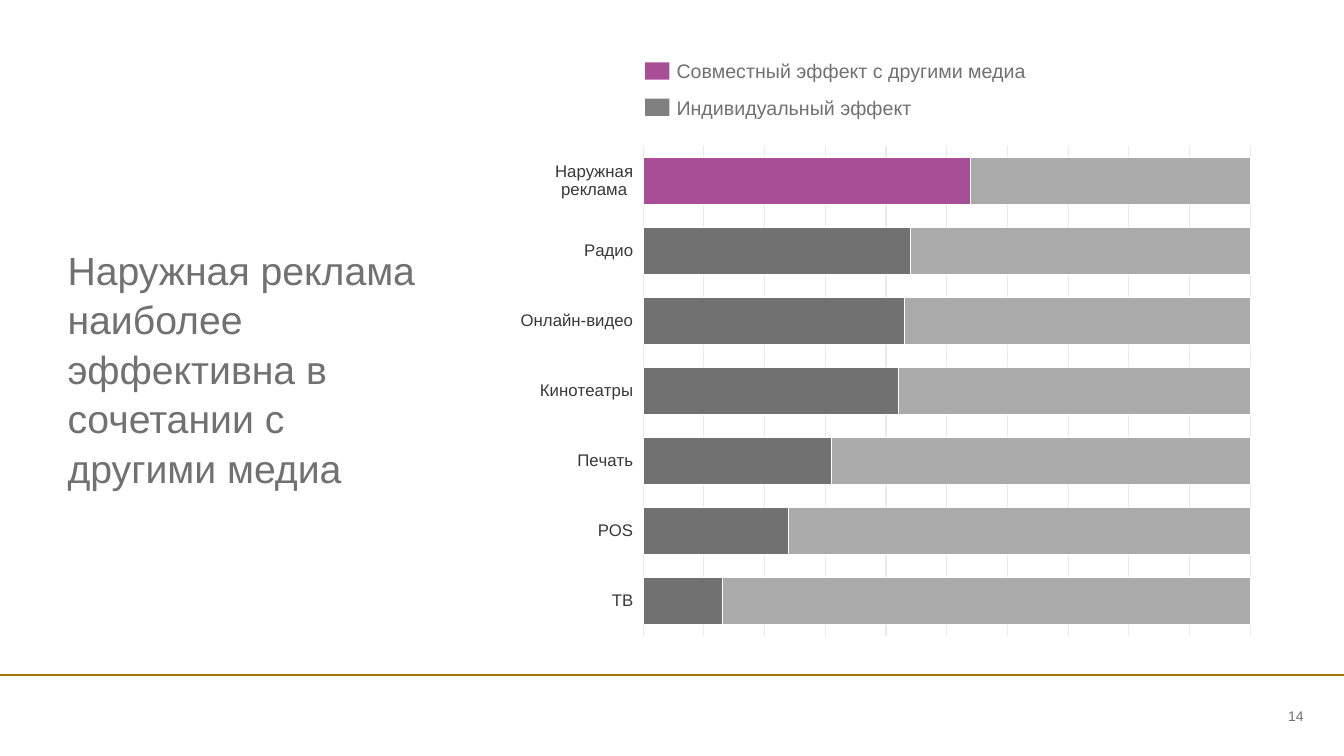
from lxml import etree
from pptx import Presentation
from pptx.chart.data import CategoryChartData
from pptx.dml.color import RGBColor
from pptx.enum.chart import XL_CHART_TYPE, XL_TICK_LABEL_POSITION, XL_TICK_MARK
from pptx.enum.shapes import MSO_CONNECTOR, MSO_SHAPE
from pptx.enum.text import MSO_ANCHOR, PP_ALIGN
from pptx.oxml import parse_xml
from pptx.oxml.ns import nsdecls, qn
from pptx.util import Inches, Pt

BAR_STACKED_100 = XL_CHART_TYPE.BAR_STACKED_100
LABELS_LOW = XL_TICK_LABEL_POSITION.LOW
NO_TICKS = XL_TICK_MARK.NONE
STRAIGHT = MSO_CONNECTOR.STRAIGHT
RECTANGLE = MSO_SHAPE.RECTANGLE
TOP, MIDDLE = MSO_ANCHOR.TOP, MSO_ANCHOR.MIDDLE
LEFT, RIGHT = PP_ALIGN.LEFT, PP_ALIGN.RIGHT

FONT = "Arial"
GRAY = RGBColor(0x71, 0x71, 0x71)
LIGHT_GRAY = RGBColor(0xAA, 0xAA, 0xAA)
KEY_GRAY = RGBColor(0x80, 0x80, 0x80)
LABEL_GRAY = RGBColor(0x38, 0x38, 0x38)
GRID_GRAY = RGBColor(0xEA, 0xEA, 0xEA)
PURPLE = RGBColor(0xA8, 0x4E, 0x97)
GOLD = RGBColor(0x9E, 0x75, 0x00)
WHITE = RGBColor(0xFF, 0xFF, 0xFF)

SLIDE_WIDTH, SLIDE_HEIGHT = 13.33, 7.5
COMBINED_EFFECT = {
    "Наружная реклама": 54,
    "Радио": 44,
    "Онлайн-видео": 43,
    "Кинотеатры": 42,
    "Печать": 31,
    "POS": 24,
    "ТВ": 13,
}
LEGEND = [
    ("Совместный эффект с другими медиа", PURPLE),
    ("Индивидуальный эффект", KEY_GRAY),
]
PLOT_LAYOUT = {"x": 0.175, "y": 0.114, "w": 0.805, "h": 0.839}


def style_font(font, size, color):
    font.name = FONT
    font.size = Pt(size)
    font.color.rgb = color


def style_line(line, color, width=0.75):
    line.color.rgb = color
    line.width = Pt(width)


def add_text(slide, text, left, top, width, height, size,
             align=LEFT, anchor=TOP, spacing=None):
    box = slide.shapes.add_textbox(
        Inches(left), Inches(top), Inches(width), Inches(height))
    frame = box.text_frame
    frame.word_wrap = True
    frame.vertical_anchor = anchor
    frame.margin_left = frame.margin_right = 0
    frame.margin_top = frame.margin_bottom = 0
    paragraph = frame.paragraphs[0]
    paragraph.alignment = align
    paragraph.line_spacing = spacing
    run = paragraph.add_run()
    run.text = text
    style_font(run.font, size, GRAY)


def add_footer(slide, left, top, width):
    rule = slide.shapes.add_connector(
        STRAIGHT, Inches(left), Inches(top), Inches(left + width), Inches(top))
    style_line(rule.line, GOLD, 1.5)
    etree.SubElement(rule._element.spPr, qn("a:effectLst"))
    add_text(slide, "14", left + width - 1.46, top + 0.29, 1.06, 0.22, 10,
             align=RIGHT, anchor=MIDDLE)


def add_legend(slide, left, top, width):
    row_step, key_width, key_height, text_height = 0.36, 0.24, 0.17, 0.24
    for row, (label, color) in enumerate(LEGEND):
        row_top = top + row * row_step
        key = slide.shapes.add_shape(
            RECTANGLE, Inches(left), Inches(row_top),
            Inches(key_width), Inches(key_height))
        key.shadow.inherit = False
        key.fill.solid()
        key.fill.fore_color.rgb = color
        key.line.fill.background()
        add_text(slide, label, left + 0.31,
                 row_top + (key_height - text_height) / 2,
                 width - 0.31, text_height, 14, anchor=MIDDLE)


def set_plot_layout(chart):
    modes = "".join(f'<c:{side}Mode val="edge"/>' for side in "xy")
    sizes = "".join(f'<c:{side} val="{value}"/>'
                    for side, value in PLOT_LAYOUT.items())
    layout = parse_xml(
        f'<c:layout {nsdecls("c")}><c:manualLayout>'
        f'<c:layoutTarget val="inner"/>{modes}{sizes}'
        f'</c:manualLayout></c:layout>')
    plot_area = chart._chartSpace.chart.plotArea
    for old_layout in plot_area.findall(qn("c:layout")):
        plot_area.remove(old_layout)
    plot_area.insert(0, layout)


def add_effect_chart(slide, left, top, width, height):
    chart_data = CategoryChartData(number_format="0")
    chart_data.categories = list(COMBINED_EFFECT)
    combined = list(COMBINED_EFFECT.values())
    chart_data.add_series("Series 1", combined)
    chart_data.add_series("Series 2", [100 - value for value in combined])
    chart = slide.shapes.add_chart(
        BAR_STACKED_100, Inches(left), Inches(top),
        Inches(width), Inches(height), chart_data).chart
    chart.has_legend = False
    chart.has_title = False
    style_font(chart.font, 10, GRAY)
    set_plot_layout(chart)

    category_axis = chart.category_axis
    category_axis.reverse_order = True
    category_axis.major_tick_mark = NO_TICKS
    category_axis.minor_tick_mark = NO_TICKS
    category_axis.tick_label_position = LABELS_LOW
    style_font(category_axis.tick_labels.font, 12, LABEL_GRAY)
    style_line(category_axis.format.line, GRID_GRAY)

    value_axis = chart.value_axis
    value_axis.visible = False
    value_axis.has_major_gridlines = True
    style_line(value_axis.major_gridlines.format.line, GRID_GRAY)

    plot = chart.plots[0]
    plot.gap_width = 50
    plot.overlap = 100
    plot.vary_by_categories = False
    for series, color in zip(plot.series, (GRAY, LIGHT_GRAY)):
        series.format.fill.solid()
        series.format.fill.fore_color.rgb = color
        style_line(series.format.line, WHITE)
    highlight = plot.series[0].points[0].format
    highlight.fill.solid()
    highlight.fill.fore_color.rgb = PURPLE
    style_line(highlight.line, WHITE)


def main():
    presentation = Presentation()
    presentation.slide_width = Inches(SLIDE_WIDTH)
    presentation.slide_height = Inches(SLIDE_HEIGHT)
    slide = presentation.slides.add_slide(presentation.slide_layouts[6])
    add_footer(slide, 0, 6.7, SLIDE_WIDTH)
    add_effect_chart(slide, 5.07, 0.79, 7.48, 5.79)
    add_legend(slide, 6.4, 0.62, 5.7)
    add_text(slide, "Наружная реклама наиболее эффективна в сочетании с другими медиа",
             0.67, 2.42, 3.5, 2.46, 28, spacing=1.05)
    presentation.save("out.pptx")


if __name__ == "__main__":
    main()
